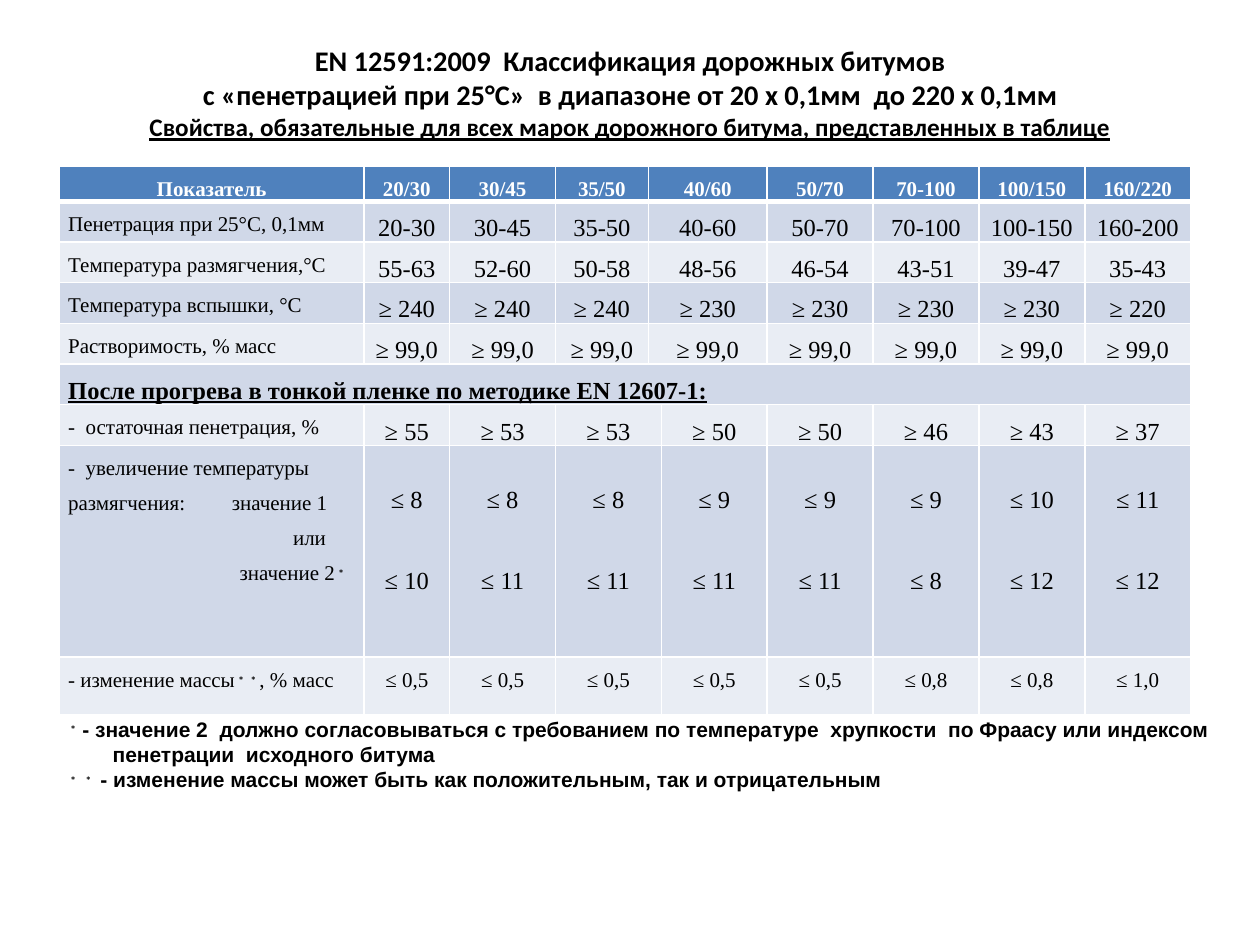
import pptx
import pptx.util
import pptx.dml.color
import pptx.enum.text
import pptx.oxml
import pptx.oxml.ns

Pt = pptx.util.Pt
RGB = pptx.dml.color.RGBColor
ALIGN = pptx.enum.text.PP_ALIGN
ANCHOR = pptx.enum.text.MSO_ANCHOR
FIT = pptx.enum.text.MSO_AUTO_SIZE

BLACK = RGB(0, 0, 0)
WHITE = RGB(255, 255, 255)
BLUE = RGB(0x4F, 0x81, 0xBD)
BANDS = (RGB(0xE9, 0xED, 0xF4), RGB(0xD0, 0xD8, 0xE8))
SERIF = "Times New Roman"
STAR = "∗"

COLS = [174, 49, 60.5, 53, 7.5] + [60.5] * 5
ROWS = [18, 18.7, 18, 18, 18, 17.3, 21.6, 121, 33]

HEAD = ["Показатель", "20/30", "30/45", "35/50", "40/60", "50/70",
        "70-100", "100/150", "160/220"]
SOLID = "≥ 99,0"
GRADES = [
    ["Пенетрация при 25°С, 0,1мм", "20-30", "30-45", "35-50", "40-60",
     "50-70", "70-100", "100-150", "160-200"],
    ["Температура размягчения,°С", "55-63", "52-60", "50-58", "48-56",
     "46-54", "43-51", "39-47", "35-43"],
    ["Температура вспышки, °С"] + ["≥ 240"] * 3 + ["≥ 230"] * 4 + ["≥ 220"],
    ["Растворимость, % масс"] + [SOLID] * 8,
]
BREAK = "После прогрева в тонкой пленке по методике EN 12607-1:"
REST = ["-  остаточная пенетрация, %"] + [
    f"≥ {n}" for n in (55, 53, 53, 50, 50, 46, 43, 37)]
RISE = [(8, 10), (8, 11), (8, 11), (9, 11), (9, 11), (9, 8), (10, 12), (11, 12)]
MASS = ["0,5"] * 5 + ["0,8"] * 2 + ["1,0"]


def style(para, size, bold=False, color=BLACK, name=SERIF):
    font = para.font
    font.size, font.bold, font.name = Pt(size), bold, name
    font.color.rgb = color


def add_run(para, text, raised=False):
    run = para.add_run()
    run.text = text
    if raised:
        run._r.get_or_add_rPr().set("baseline", "30000")
    return run


def indent(para, left):
    para._p.get_or_add_pPr().set("marL", str(Pt(left)))


def add_tab(para, place):
    props = para._p.get_or_add_pPr()
    tabs = pptx.oxml.parse_xml(
        f'<a:tabLst {pptx.oxml.ns.nsdecls("a")}>'
        f'<a:tab pos="{Pt(place)}" algn="l"/></a:tabLst>')
    fonts = props.find(pptx.oxml.ns.qn("a:defRPr"))
    if fonts is None:
        props.append(tabs)
    else:
        fonts.addprevious(tabs)


def add_title(slide, left, top, width, height):
    title = slide.shapes.title
    title.left, title.top = Pt(left), Pt(top)
    title.width, title.height = Pt(width), Pt(height)
    frame = title.text_frame
    frame.auto_size = FIT.NONE
    frame.vertical_anchor = ANCHOR.MIDDLE
    para = frame.paragraphs[0]
    para.alignment = ALIGN.CENTER
    style(para, 16.2, True, name="Calibri")
    for line in ("EN 12591:2009  Классификация дорожных битумов",
                 "c «пенетрацией при 25°С»  в диапазоне от 20 х 0,1мм  до 220 х 0,1мм"):
        add_run(para, line)
        para.add_line_break()
    run = add_run(para, "Свойства, обязательные для всех марок дорожного битума, "
                        "представленных в таблице")
    run.font.size, run.font.underline = Pt(14.4), True


def set_cell(cell, row):
    """Margins, white borders and band fill."""
    cell.margin_left = cell.margin_right = Pt(5)
    cell.margin_top = cell.margin_bottom = 0
    props = cell._tc.get_or_add_tcPr()
    for side in "LRTB":
        thick = (row, side) in ((0, "B"), (1, "T"))
        props.append(pptx.oxml.parse_xml(
            f'<a:ln{side} {pptx.oxml.ns.nsdecls("a")} w="{Pt(3 if thick else 1)}">'
            f'<a:solidFill><a:srgbClr val="{WHITE}"/></a:solidFill></a:ln{side}>'))
    cell.fill.solid()
    cell.fill.fore_color.rgb = BANDS[row % 2] if row else BLUE


def write(cell, lines, size, center=True, bold=False, color=BLACK):
    """One paragraph for each line; returns the paragraphs."""
    frame = cell.text_frame
    paras = [frame.paragraphs[0]] + [frame.add_paragraph() for _ in lines[1:]]
    for para, line in zip(paras, lines):
        para.line_spacing = 1.5
        para.alignment = ALIGN.CENTER if center else ALIGN.LEFT
        style(para, size, bold, color)
        add_run(para, line)
    return paras


def add_grid(slide, left, top):
    table = slide.shapes.add_table(len(ROWS), len(COLS), Pt(left), Pt(top),
                                   Pt(sum(COLS)), Pt(sum(ROWS))).table
    for col, width in zip(table.columns, COLS):
        col.width = Pt(width)
    for row, height in zip(table.rows, ROWS):
        row.height = Pt(height)
    for row in range(len(ROWS)):
        for col in range(len(COLS)):
            set_cell(table.cell(row, col), row)

    # The narrow column joins its right neighbour above the break, its left below
    def cells(row):
        first = 4 if row < 5 else 3
        table.cell(row, first).merge(table.cell(row, first + 1))
        return [table.cell(row, col) for col in range(len(COLS)) if col != first + 1]

    # Header
    for cell, text in zip(cells(0), HEAD):
        write(cell, [text], 12, bold=True, color=WHITE)

    # Plain rows
    for row, texts in [*enumerate(GRADES, 1), (6, REST)]:
        for col, (cell, text) in enumerate(zip(cells(row), texts)):
            write(cell, [text], 14 if col else 12, center=col > 0)

    # Break row
    table.cell(5, 0).merge(table.cell(5, len(COLS) - 1))
    para = write(table.cell(5, 0), [BREAK], 14, center=False, bold=True)[0]
    para.font.underline = True
    para.runs[0].font.underline = True

    # Rise of the softening point
    label, *rest = cells(7)
    paras = write(label, ["-  увеличение температуры размягчения:\tзначение 1",
                          "или", "значение 2"], 12, center=False)
    add_tab(paras[0], 93.5)
    indent(paras[1], 128.5)
    indent(paras[2], 98)
    add_run(paras[2], STAR, True)
    for cell, pair in zip(rest, RISE):
        cell.margin_top = Pt(16)
        write(cell, [f"≤ {n}" for n in pair], 14)[1].space_before = Pt(23)

    # Change of mass
    label, *rest = cells(8)
    para = write(label, ["- изменение массы"], 12, center=False)[0]
    add_run(para, STAR * 2, True)
    add_run(para, ", % масс")
    for cell, text in zip(rest, MASS):
        write(cell, [f"≤ {text}"], 12)


def add_notes(slide, left, top, width, height):
    frame = slide.shapes.add_textbox(Pt(left), Pt(top), Pt(width), Pt(height)).text_frame
    frame.word_wrap = True
    frame.vertical_anchor = ANCHOR.MIDDLE
    notes = [
        (27, f"{STAR} ", "- значение 2  должно согласовываться с требованием по "
         "температуре  хрупкости  по Фраасу или индексом"),
        (53, "", "пенетрации  исходного битума"),
        (27, f"{STAR} {STAR}", " - изменение массы может быть как положительным, "
         "так и отрицательным"),
    ]
    for num, (inset, mark, text) in enumerate(notes):
        para = frame.add_paragraph() if num else frame.paragraphs[0]
        style(para, 12, True, name="Arial")
        indent(para, inset)
        if mark:
            add_run(para, mark, True).font.name = SERIF
        add_run(para, text)


def main():
    deck = pptx.Presentation()
    deck.slide_width, deck.slide_height = Pt(720), Pt(540)
    slide = deck.slides.add_slide(deck.slide_layouts[5])
    add_title(slide, 36, 21.6, 648, 62.6)
    add_grid(slide, 34, 95)
    add_notes(slide, 4.3, 405.4, 715.7, 51)
    deck.save("out.pptx")


if __name__ == "__main__":
    main()
